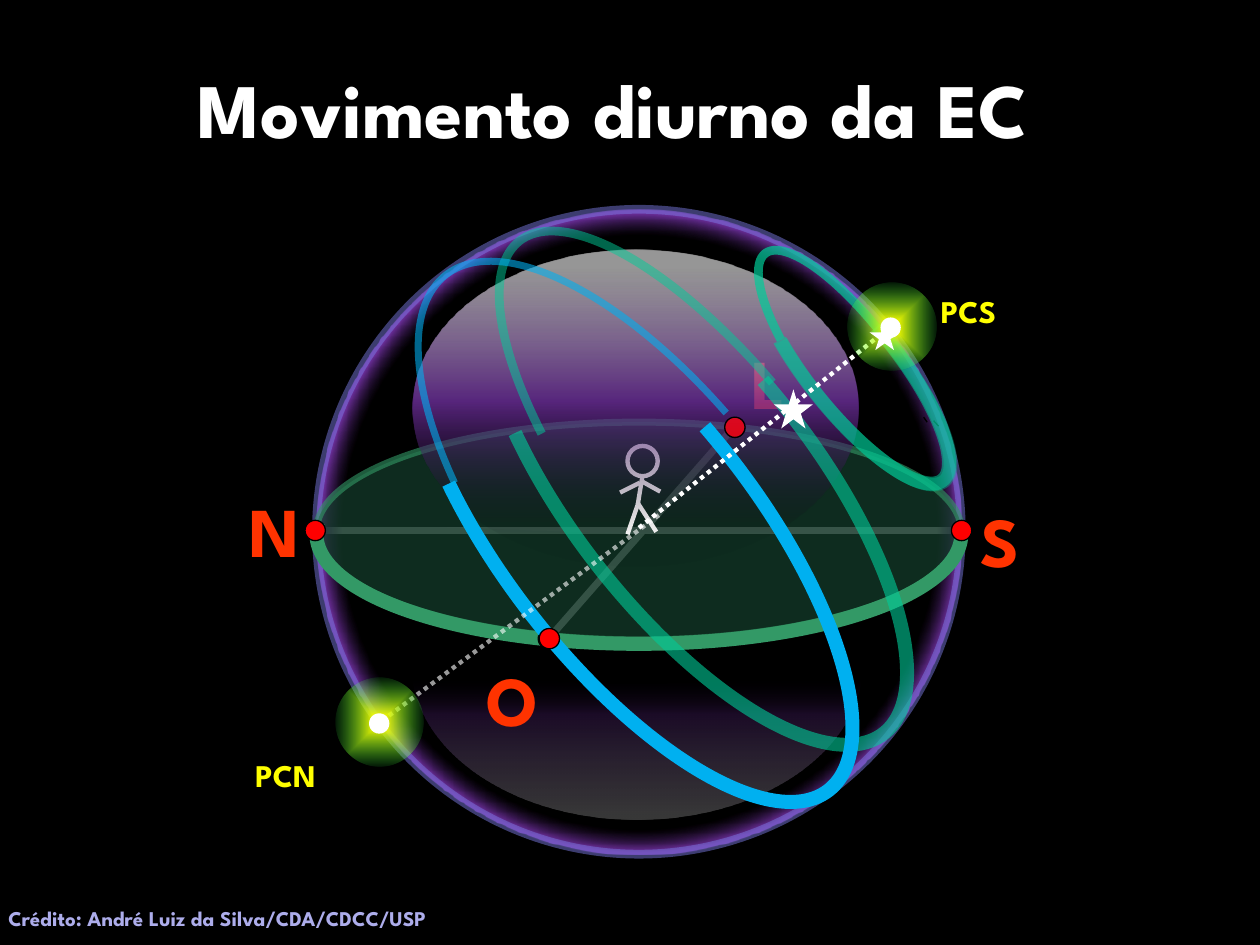
from dataclasses import dataclass
from typing import NamedTuple, Optional

from lxml.etree import SubElement as Sub
from pptx import Presentation
from pptx.dml.color import RGBColor as RGB
from pptx.enum.dml import MSO_LINE as Dash
from pptx.enum.shapes import MSO_CONNECTOR as Link, MSO_SHAPE as Kind
from pptx.enum.text import MSO_ANCHOR as Anchor, MSO_AUTO_SIZE as Fit, PP_ALIGN as Align
from pptx.oxml.ns import qn
from pptx.util import Cm, Pt

BLACK = RGB(0x00, 0x00, 0x00)
WHITE = RGB(0xFF, 0xFF, 0xFF)
PURPLE = RGB(0x70, 0x30, 0xA0)
RIM = RGB(0x78, 0x78, 0xDE)
ORANGE = RGB(0xFF, 0x33, 0x00)
YELLOW = RGB(0xFF, 0xFF, 0x00)
LIME = RGB(0x21, 0xFF, 0x46)
RED = RGB(0xFF, 0x00, 0x00)
DARK = RGB(0x14, 0x3C, 0x2B)
GREEN = RGB(0x33, 0x99, 0x66)
TEAL = RGB(0x00, 0xCC, 0x99)
BLUE = RGB(0x00, 0xB0, 0xF0)
LILAC = RGB(0xAD, 0xAD, 0xEB)
FONT = "League Spartan"
DOT = 0.41


class Pen(NamedTuple):
    color: RGB
    width: float
    alpha: int = 100
    dash: Optional[Dash] = None


class Paint(NamedTuple):
    color: RGB
    alpha: int = 100


class Blend(NamedTuple):
    stops: tuple  # (position, colour, alpha)
    angle: int = 0
    form: str = ""  # circle or shape; empty means linear


class Label(NamedTuple):
    text: str
    box: tuple
    size: int
    color: RGB


@dataclass
class Form:
    box: tuple
    kind: Kind = Kind.OVAL
    fill: object = None
    pen: Optional[Pen] = None
    turn: float = 0
    adj: tuple = ()


def fade(node, alpha: int) -> None:
    if alpha < 100:
        Sub(node, qn("a:alpha")).set("val", str(alpha * 1000))


def stroke(line, node, pen: Pen) -> None:
    line.color.rgb = pen.color
    line.width = Pt(pen.width)
    if pen.dash:
        line.dash_style = pen.dash
    fade(node.find(qn("a:ln")).find(".//" + qn("a:srgbClr")), pen.alpha)


def blend(shape, mix: Blend) -> None:
    shape.fill.gradient()
    grad = shape._element.spPr.find(qn("a:gradFill"))
    for child in list(grad):
        grad.remove(child)
    grad.set("rotWithShape", "1")
    stops = Sub(grad, qn("a:gsLst"))
    for pos, color, alpha in mix.stops:
        stop = Sub(stops, qn("a:gs"), pos=str(pos * 1000))
        fade(Sub(stop, qn("a:srgbClr"), val=str(color)), alpha)
    if mix.form:
        way = Sub(grad, qn("a:path"), path=mix.form)
        Sub(way, qn("a:fillToRect"), {side: "50000" for side in "ltrb"})
    else:
        Sub(grad, qn("a:lin"), ang=str(mix.angle * 60000), scaled="0")


def draw(slide, form: Form) -> None:
    shape = slide.shapes.add_shape(form.kind, *map(Cm, form.box))
    shape.shadow.inherit = False
    shape.rotation = form.turn
    for i, value in enumerate(form.adj):
        # arc angles are degrees, other adjustments are fractions
        shape.adjustments[i] = value * 0.6 if form.kind == Kind.ARC else value
    if isinstance(form.fill, Blend):
        blend(shape, form.fill)
    elif form.fill:
        shape.fill.solid()
        shape.fill.fore_color.rgb = form.fill.color
        fade(shape._element.spPr.find(qn("a:solidFill"))[0], form.fill.alpha)
    else:
        shape.fill.background()
    if form.pen:
        stroke(shape.line, shape._element.spPr, form.pen)
    else:
        shape.line.fill.background()


def join(slide, ends: tuple, pen: Pen) -> None:
    line = slide.shapes.add_connector(Link.STRAIGHT, *map(Cm, ends))
    node = line._element.spPr
    stroke(line.line, node, pen)
    Sub(node, qn("a:effectLst"))


def style(run, size: int, color: RGB) -> None:
    for name, value in {"name": FONT, "size": Pt(size), "bold": True}.items():
        setattr(run.font, name, value)
    run.font.color.rgb = color


def write(slide, label: Label, lead: bool = True) -> None:
    frame = slide.shapes.add_textbox(*map(Cm, label.box)).text_frame
    frame.word_wrap = True
    frame.auto_size = Fit.SHAPE_TO_FIT_TEXT
    para = frame.paragraphs[0]
    style_run = para.add_run()
    style_run.text = label.text
    style(style_run, label.size, label.color)
    if lead:
        before = Sub(para._p.get_or_add_pPr(), qn("a:spcBef"))
        Sub(before, qn("a:spcPct"), val="50000")


def dot(x: float, y: float, alpha: int = 100) -> Form:
    return Form((x, y, DOT, DOT), fill=Paint(RED, alpha), pen=Pen(BLACK, 0.75))


def arc(box: tuple, turn: float, adj: tuple, pen: Pen, fill=None) -> Form:
    return Form(box, Kind.ARC, fill, pen, turn, adj)


def point(name: str, x: float, y: float) -> Label:
    return Label(name, (x, y, 0.99, 1.96), 40, ORANGE)


def pole(name: str, x: float, y: float) -> Label:
    return Label(name, (x, y, 2.21, 1.02), 18, YELLOW)


BAR, LIMB, HAIR = Pen(WHITE, 4), Pen(WHITE, 2.5), Pen(BLACK, 0.75)
HALO = Blend(((7, YELLOW, 100), (77, LIME, 2)), form="shape")
FLOOR = Blend(((3, WHITE, 37), (68, PURPLE, 41), (94, BLACK, 0)))
SHELL = Blend(((65, BLACK, 40), (70, PURPLE, 100)), form="circle")
DOME = Blend(((6, WHITE, 58), (48, PURPLE, 77), (91, BLACK, 2)), 90)

# Parts from back to front: forms, labels, or (ends, pen) lines
PARTS = [
    # Sphere, meridian lines and cardinal points
    Form((11.28, 10.41, 3.12, 9.09), Kind.MOON, FLOOR, turn=270, adj=(0.875,)),
    ((10.95, 13, 14.81, 8.59), BAR),
    ((6.38, 10.69, 19.35, 10.69), BAR),
    Form((6.38, 4.22, 13, 13), fill=SHELL, pen=Pen(RIM, 5, 50)),
    point("N", 4.78, 9.7), point("L", 14.91, 6.71), point("S", 19.51, 9.91),
    # Horizon
    Form((6.38, 8.51, 13, 4.39), fill=Paint(DARK, 73), pen=Pen(GREEN, 4, 60)),
    point("O", 9.55, 13.11),
    ((18.92, 8.59, 18.82, 8.48), HAIR),
    arc((6.38, 8.56, 13, 4.42), 0, (-1, 182), Pen(GREEN, 8), Paint(DARK, 7)),
    # Observer
    Form((12.65, 8.99, 0.61, 0.61), pen=LIMB),
    *((ends, LIMB) for ends in (
        (12.95, 9.6, 12.85, 10.21), (12.85, 10.13, 13.23, 10.72),
        (12.85, 10.19, 12.65, 10.77), (12.93, 9.7, 13.31, 9.91),
        (12.5, 9.93, 12.9, 9.73))),
    dot(6.15, 10.49), dot(14.61, 8.41), dot(10.85, 12.67), dot(19.18, 10.49),
    Form((8.31, 5.03, 8.99, 6.4), fill=DOME),
    pole("PCS", 18.72, 5.77), pole("PCN", 4.9, 15.11),
    ((18.69, 8.51, 18.62, 8.41), HAIR),
    # Daily paths of the stars
    arc((16.28, 4.52, 1.8, 5.82), 143, (58.97, 159.35), Pen(TEAL, 5, 70)),
    arc((16.31, 4.52, 1.8, 5.82), 141.3, (159.36, 59.38), Pen(TEAL, 7.75, 35)),
    arc((11.96, 3.56, 4.57, 12.29), 142.1, (54.05, 161.47), Pen(TEAL, 5, 50)),
    arc((11.51, 3.63, 4.95, 12.47), 142.1, (160.31, 55.41), Pen(TEAL, 8, 60)),
    arc((16.28, 4.5, 1.8, 5.82), 141.3, (159.36, 59.38), Pen(TEAL, 8, 53)),
    # Celestial equator
    arc((10.21, 4.17, 5.54, 13), 142.1, (51.69, 163.14), Pen(BLUE, 4, 58)),
    arc((10.16, 4.32, 5.11, 12.98), 142.1, (161.99, 54), Pen(BLUE, 8)),
    dot(10.87, 12.67), dot(14.61, 8.41, 65),
    # Axis, poles and stars
    ((7.7, 14.53, 13.34, 10.34), Pen(WHITE, 2.5, 60, Dash.ROUND_DOT)),
    ((12.88, 10.64, 17.96, 6.58), Pen(WHITE, 2.5, 100, Dash.ROUND_DOT)),
    *(Form((x, y, 1.78, 1.78), fill=HALO, turn=305.7)
      for x, y in ((17.09, 5.69), (6.76, 13.67))),
    *(Form((x, y, DOT, DOT), fill=Paint(WHITE))
      for x, y in ((17.75, 6.4), (7.44, 14.38))),
    *(Form(box, Kind.STAR_5_POINT, Paint(WHITE))
      for box in ((17.53, 6.48, 0.61, 0.58), (15.6, 7.85, 0.79, 0.79))),
]


def main() -> None:
    deck = Presentation()
    deck.slide_width, deck.slide_height = Cm(25.4), Cm(19.05)
    slide = deck.slides.add_slide(deck.slide_layouts[5])
    slide.background.fill.solid()
    slide.background.fill.fore_color.rgb = BLACK

    # Title
    title = slide.shapes.title
    title.left, title.top, title.width, title.height = map(Cm, (1.57, 0.58, 21.59, 3.18))
    title.text_frame.text = "Movimento diurno da EC"
    title.text_frame.vertical_anchor = Anchor.MIDDLE
    para = title.text_frame.paragraphs[0]
    para.alignment = Align.CENTER
    style(para.runs[0], 44, WHITE)

    for part in PARTS:
        if isinstance(part, Form):
            draw(slide, part)
        elif isinstance(part, Label):
            write(slide, part)
        else:
            join(slide, *part)

    # Credit line
    credit = "Crédito: André Luiz da Silva/CDA/CDCC/USP"
    write(slide, Label(credit, (-0.08, 18.14, 26.11, 0.76), 12, LILAC), lead=False)
    deck.save("out.pptx")


if __name__ == "__main__":
    main()
